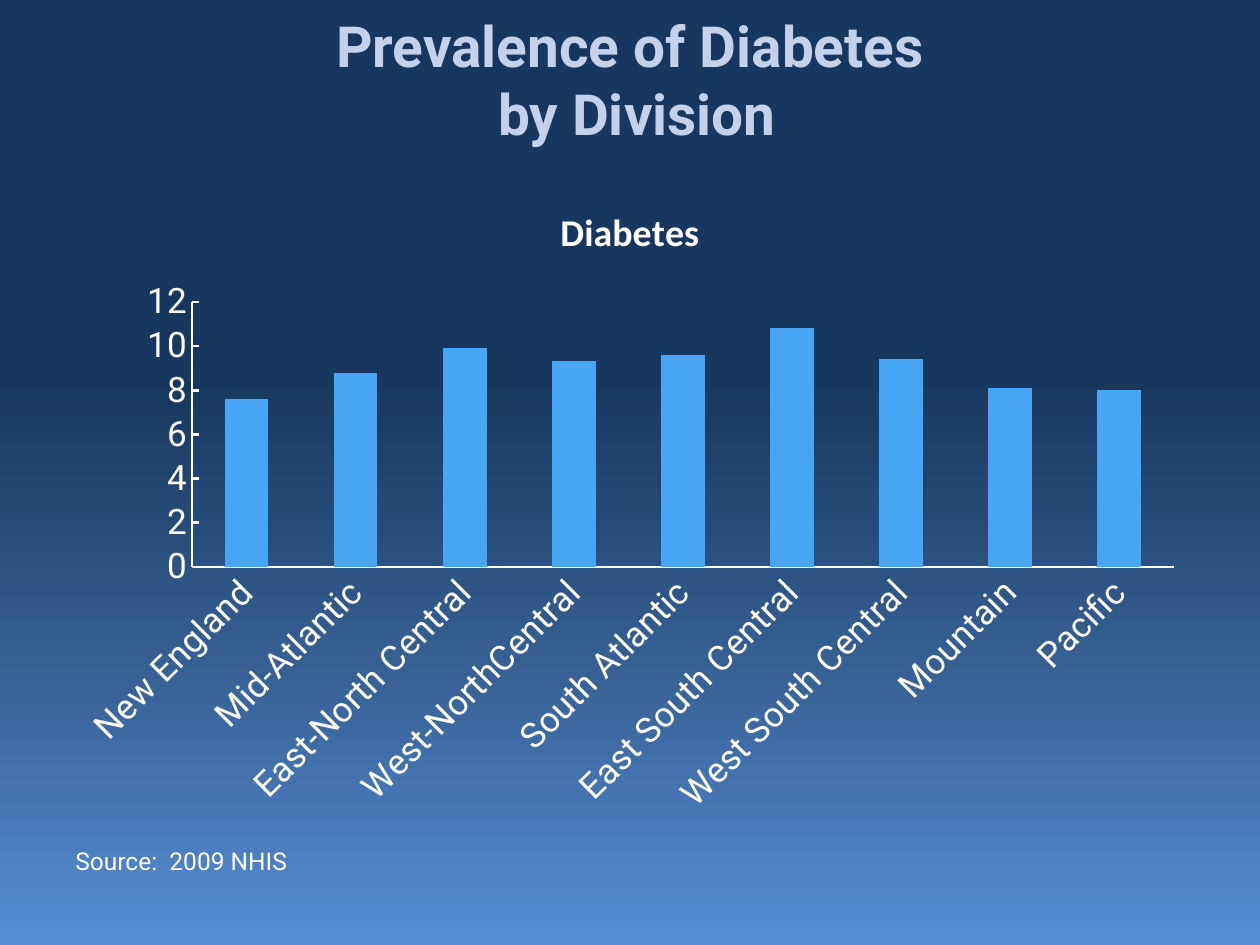
import pptx
import pptx.chart.data
import pptx.dml.color
import pptx.enum.chart
import pptx.enum.text
import pptx.oxml
import pptx.oxml.ns
import pptx.util
import lxml.etree

RGBColor = pptx.dml.color.RGBColor
WHITE = RGBColor(0xFF, 0xFF, 0xFF)
TITLE_BLUE = RGBColor(0xC4, 0xD1, 0xEB)
BAR_BLUE = RGBColor(0x47, 0xA5, 0xF3)
NAVY = RGBColor(0x17, 0x37, 0x5E)
MID_BLUE = RGBColor(0x37, 0x5F, 0x92)
SKY_BLUE = RGBColor(0x55, 0x8E, 0xD5)
PX = 914400 // 126
qn = pptx.oxml.ns.qn


def style_font(font, name, size, color, bold=False):
    font.name = name
    font.size = pptx.util.Pt(size)
    font.color.rgb = color
    font.bold = bold


def add_text(text, left, top, width, height, size, color, bold, alignment, anchor):
    shape = slide.shapes.add_textbox(left * PX, top * PX, width * PX, height * PX)
    text_frame = shape.text_frame
    text_frame.word_wrap = True
    text_frame.vertical_anchor = anchor
    paragraph = text_frame.paragraphs[0]
    paragraph.text = text
    paragraph.alignment = alignment
    for run in paragraph.runs:
        style_font(run.font, "Roboto", size, color, bold)


presentation = pptx.Presentation()
presentation.slide_width = 1260 * PX
presentation.slide_height = 945 * PX
slide = presentation.slides.add_slide(presentation.slide_layouts[6])

background = slide.background.fill
background.gradient()
background.gradient_angle = 270
stops = next(slide.element.iter(qn("a:gsLst")))
for stop in list(stops):
    stops.remove(stop)
for percent, color in [(0, NAVY), (40, NAVY), (70, MID_BLUE), (100, SKY_BLUE)]:
    stop = lxml.etree.SubElement(stops, qn("a:gs"), pos=str(percent * 1000))
    lxml.etree.SubElement(stop, qn("a:srgbClr"), val=str(color))

ALIGN = pptx.enum.text.PP_ALIGN
ANCHOR = pptx.enum.text.MSO_ANCHOR
add_text("Prevalence of Diabetes\v by Division", 63, 0, 1134, 158,
         32.4, TITLE_BLUE, True, ALIGN.CENTER, ANCHOR.MIDDLE)
add_text("Source:  2009 NHIS", 63, 840, 1134, 32,
         14, WHITE, False, ALIGN.LEFT, ANCHOR.TOP)

prevalence = {
    "New England": 7.6,
    "Mid-Atlantic": 8.8,
    "East-North Central": 9.9,
    "West-NorthCentral": 9.3,
    "South Atlantic": 9.6,
    "East South Central": 10.8,
    "West South Central": 9.4,
    "Mountain": 8.1,
    "Pacific": 8,
}
chart_data = pptx.chart.data.CategoryChartData()
chart_data.categories = list(prevalence)
chart_data.add_series("Diabetes", list(prevalence.values()))
chart = slide.shapes.add_chart(
    pptx.enum.chart.XL_CHART_TYPE.COLUMN_CLUSTERED,
    63 * PX, 179 * PX, 1134 * PX, 651 * PX, chart_data).chart
style_font(chart.font, "Calibri", 18, WHITE)
chart.has_legend = False
chart.has_title = True
chart_title = chart.chart_title.text_frame
chart_title.text = "Diabetes"
style_font(chart_title.paragraphs[0].runs[0].font, "Calibri", 21.6, WHITE, True)

plot = chart.plots[0]
plot.gap_width = 150
plot.vary_by_categories = False
bar_fill = plot.series[0].format.fill
bar_fill.solid()
bar_fill.fore_color.rgb = BAR_BLUE

TICK = pptx.enum.chart.XL_TICK_MARK
for axis, tick in [(chart.category_axis, TICK.NONE), (chart.value_axis, TICK.INSIDE)]:
    axis.has_major_gridlines = False
    axis.major_tick_mark = tick
    axis.minor_tick_mark = TICK.NONE
    style_font(axis.tick_labels.font, "Roboto", 20, WHITE)
    axis.format.line.color.rgb = WHITE
    axis.format.line.width = pptx.util.Pt(1.5)
chart.value_axis.minimum_scale = 0
chart.value_axis.maximum_scale = 12
chart.value_axis.major_unit = 2
label_body = next(chart.category_axis._element.iter(qn("a:bodyPr")))
label_body.set("rot", str(-45 * 60000))
label_body.set("vert", "horz")

plot_area = next(chart.element.iter(qn("c:plotArea")))
for layout in plot_area.findall(qn("c:layout")):
    plot_area.remove(layout)
layout = lxml.etree.Element(qn("c:layout"))
plot_area.insert(0, layout)
manual = lxml.etree.SubElement(layout, qn("c:manualLayout"))
for tag, value in [("layoutTarget", "inner"), ("xMode", "edge"), ("yMode", "edge"),
                   ("x", 129 / 1134), ("y", 123 / 651), ("w", 982 / 1134), ("h", 265 / 651)]:
    lxml.etree.SubElement(manual, qn("c:" + tag), val=str(value))

presentation.save("out.pptx")
